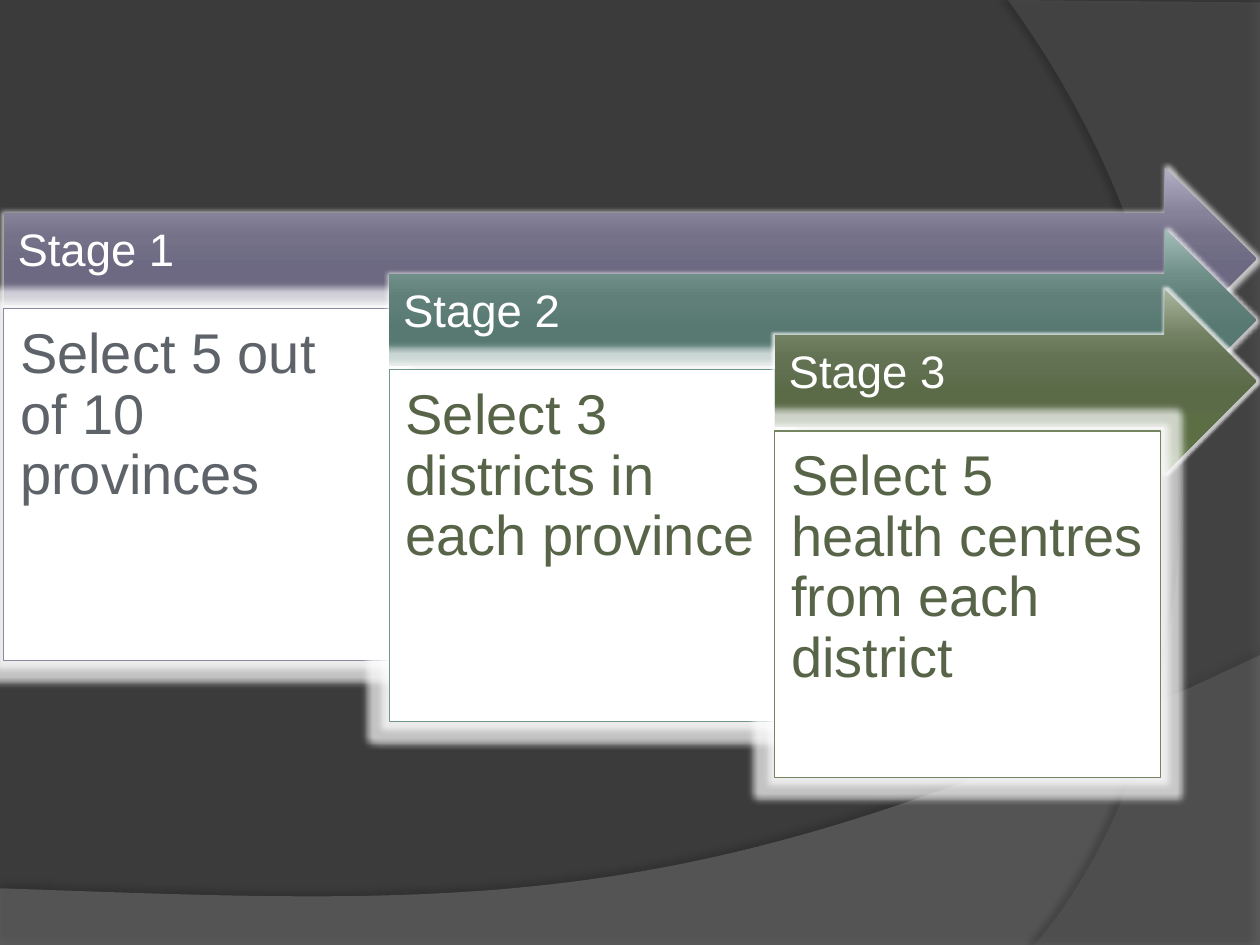
from dataclasses import dataclass

from pptx import Presentation
from pptx.dml.color import RGBColor
from pptx.enum.shapes import MSO_SHAPE
from pptx.enum.text import MSO_ANCHOR, PP_ALIGN
from pptx.oxml import parse_xml
from pptx.oxml.ns import nsdecls, qn
from pptx.util import Inches, Pt

Point = tuple[float, float]


@dataclass(frozen=True)
class Theme:
    font: str = "Arial"
    background: str = "3B3B3B"
    bottom_band: str = "7F7F7F"
    side_band: str = "5E5E5E"
    white: str = "FFFFFF"
    stage_size: int = 26
    detail_size: int = 32
    gradient_stops: tuple[int, ...] = (0, 25, 38, 55, 80, 88, 100)


@dataclass(frozen=True)
class Stage:
    name: str
    detail: str
    detail_color: str
    border: str
    gradient: tuple[str, ...]
    box_height: float = 2.79


THEME = Theme()

STAGES = (
    Stage("Stage 1", "Select 5 out of 10 provinces", "5E636A", "8D89A4",
          ("B3B0C6", "86829A", "747188", "6D6983", "6A6684", "6F698D", "8982AC")),
    Stage("Stage 2", "Select 3 districts in each province", "576448", "73968F",
          ("A4BFB9", "708F89", "617F79", "577972", "537B73", "55847B", "6AA196")),
    Stage("Stage 3", "Select 5 health centres from each district", "576448", "748560",
          ("A9B59D", "728062", "647254", "5B6B48", "5B6E44", "607645", "769058"), 2.75),
)

LEFT, TOP, RIGHT = 0.03, 1.33, 9.97
STEP_X, STEP_Y = 3.06, 0.485
ARROW_HEIGHT = 1.45
BOX_OFFSET = 1.12

LABEL_FORMAT = {
    "vertical_anchor": MSO_ANCHOR.MIDDLE,
    "margin_left": Inches(0.11), "margin_top": Inches(0.11),
    "margin_right": Inches(0.28), "margin_bottom": Inches(0.23),
}
DETAIL_FORMAT = {
    "vertical_anchor": MSO_ANCHOR.TOP,
    "margin_left": Inches(0.13), "margin_top": Inches(0.13),
    "margin_right": Inches(0.13), "margin_bottom": Inches(0.13),
}


def color_xml(color: str, opacity: int) -> str:
    return f'<a:srgbClr val="{color}"><a:alpha val="{opacity * 1000}"/></a:srgbClr>'


def add_effect(shape, effect_xml: str) -> None:
    shape.shadow.inherit = False
    effects = shape.element.spPr.find(qn("a:effectLst"))
    effects.append(parse_xml(effect_xml))


def add_glow(shape, radius: float) -> None:
    add_effect(shape, f'<a:glow {nsdecls("a")} rad="{Inches(radius)}">'
                      f'{color_xml(THEME.white, 70)}</a:glow>')


def add_shadow(shape, opacity: int, distance: float, direction: int) -> None:
    add_effect(shape, f'<a:outerShdw {nsdecls("a")} blurRad="{Pt(4)}" dist="{Pt(distance)}" '
                      f'dir="{direction * 60000}">{color_xml("000000", opacity)}</a:outerShdw>')


def fill_gradient(shape, colors: tuple[str, ...]) -> None:
    """Fill with a gradient running from top to bottom."""
    stops = "".join(f'<a:gs pos="{position * 1000}"><a:srgbClr val="{color}"/></a:gs>'
                    for position, color in zip(THEME.gradient_stops, colors))
    gradient = parse_xml(f'<a:gradFill {nsdecls("a")} rotWithShape="1"><a:gsLst>{stops}</a:gsLst>'
                         '<a:lin ang="5400000" scaled="0"/></a:gradFill>')
    shape.element.spPr.find(qn("a:prstGeom")).addnext(gradient)


def curve(start: Point, control_1: Point, control_2: Point, end: Point,
          steps: int = 60) -> list[Point]:
    """Sample a cubic Bézier curve."""
    points = []
    for step in range(steps + 1):
        t = step / steps
        weights = ((1 - t) ** 3, 3 * t * (1 - t) ** 2, 3 * t ** 2 * (1 - t), t ** 3)
        corners = (start, control_1, control_2, end)
        points.append((sum(w * x for w, (x, _) in zip(weights, corners)),
                       sum(w * y for w, (_, y) in zip(weights, corners))))
    return points


def add_band(slide, points: list[Point], color: str, opacity: int):
    """Draw a translucent background outline."""
    vertices = [(Inches(x), Inches(y)) for x, y in points]
    builder = slide.shapes.build_freeform(*vertices[0])
    builder.add_line_segments(vertices[1:], close=True)
    shape = builder.convert_to_shape()
    shape.fill.solid()
    shape.fill.fore_color.rgb = RGBColor.from_string(color)
    fill_color = shape.element.spPr.find(qn("a:solidFill")).find(qn("a:srgbClr"))
    fill_color.append(parse_xml(f'<a:alpha {nsdecls("a")} val="{opacity * 1000}"/>'))
    shape.line.fill.background()
    return shape


def write_text(shape, text: str, size: int, color: str, frame_format: dict) -> None:
    frame = shape.text_frame
    frame.word_wrap = True
    for name, value in frame_format.items():
        setattr(frame, name, value)
    paragraph = frame.paragraphs[0]
    paragraph.alignment = PP_ALIGN.LEFT
    paragraph.line_spacing = 0.9
    run = paragraph.add_run()
    run.text = text
    for name, value in {"name": THEME.font, "size": Pt(size)}.items():
        setattr(run.font, name, value)
    run.font.color.rgb = RGBColor.from_string(color)


def add_stage(slide, index: int, stage: Stage) -> None:
    left = LEFT + index * STEP_X
    top = TOP + index * STEP_Y

    arrow = slide.shapes.add_shape(MSO_SHAPE.RIGHT_ARROW, Inches(left), Inches(top),
                                   Inches(RIGHT - left), Inches(ARROW_HEIGHT))
    fill_gradient(arrow, stage.gradient)
    arrow.line.fill.background()
    add_glow(arrow, 0.04)
    write_text(arrow, stage.name, THEME.stage_size, THEME.white, LABEL_FORMAT)

    box = slide.shapes.add_shape(MSO_SHAPE.RECTANGLE, Inches(left), Inches(top + BOX_OFFSET),
                                 Inches(STEP_X), Inches(stage.box_height))
    box.fill.solid()
    box.fill.fore_color.rgb = RGBColor.from_string(THEME.white)
    box.line.color.rgb = RGBColor.from_string(stage.border)
    box.line.width = Pt(0.75)
    add_glow(box, 0.11)
    write_text(box, stage.detail, THEME.detail_size, stage.detail_color, DETAIL_FORMAT)


def main() -> None:
    presentation = Presentation()
    presentation.slide_width = Inches(10)
    presentation.slide_height = Inches(7.5)
    slide = presentation.slides.add_slide(presentation.slide_layouts[6])
    slide.background.fill.solid()
    slide.background.fill.fore_color.rgb = RGBColor.from_string(THEME.background)

    bottom_edge = curve((10, 5.2), (5.59, 7.29), (3.91, 7.19), (0, 7.05))
    bottom_band = add_band(slide, [(0, 7.5), (10, 7.5), *bottom_edge], THEME.bottom_band, 45)
    add_shadow(bottom_band, opacity=35, distance=3.5, direction=270)

    side_edge = curve((8.21, 7.5), (9.35, 6.19), (10.18, 3), (8, 0))
    side_band = add_band(slide, [(10, 0.02), (10, 7.5), *side_edge], THEME.side_band, 40)
    add_shadow(side_band, opacity=45, distance=4, direction=180)

    for index, stage in enumerate(STAGES):
        add_stage(slide, index, stage)

    presentation.save("out.pptx")


if __name__ == "__main__":
    main()
